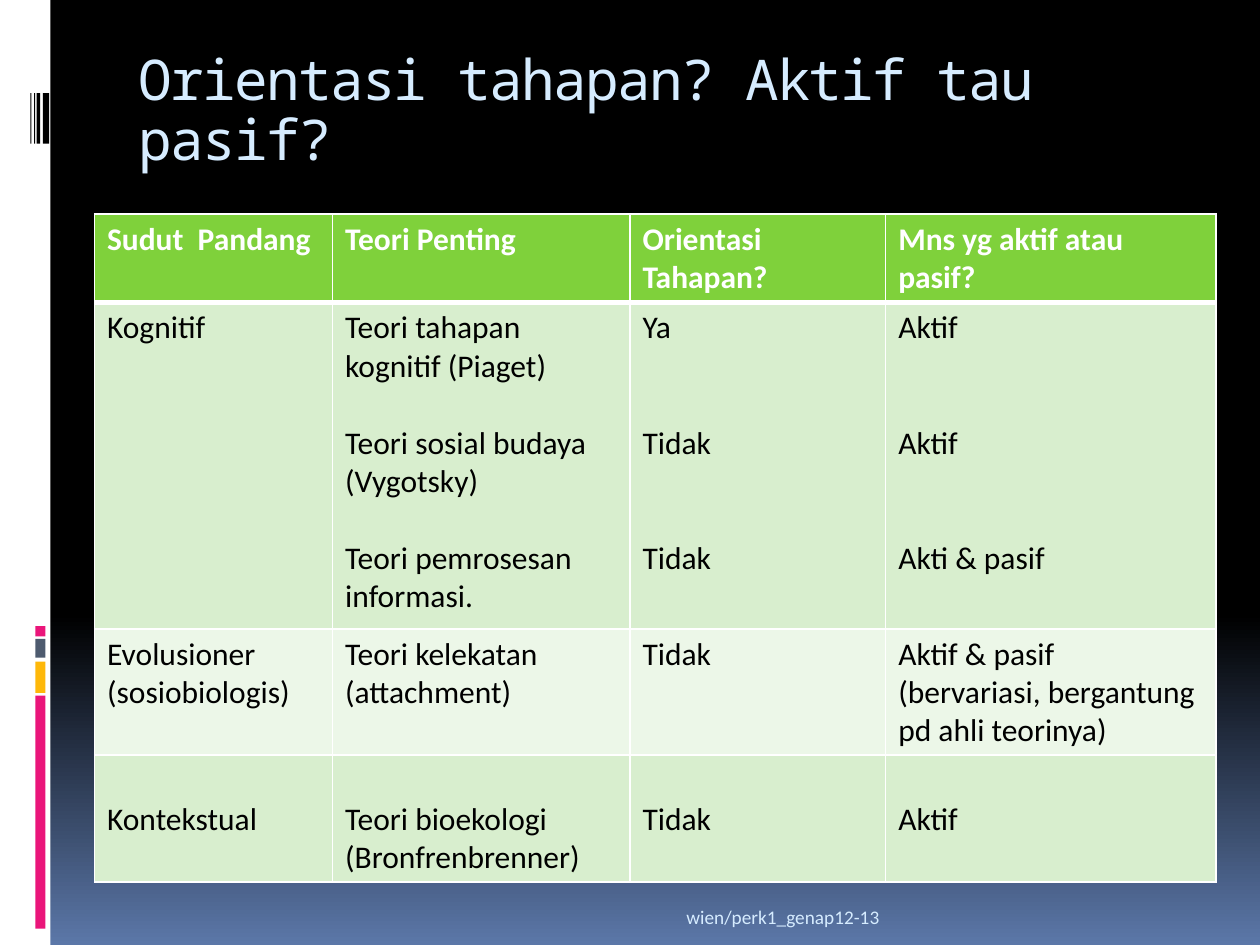
from typing import NamedTuple

from lxml import etree
from pptx import Presentation
from pptx.dml.color import RGBColor
from pptx.enum.shapes import MSO_SHAPE
from pptx.enum.text import MSO_ANCHOR, MSO_AUTO_SIZE, PP_ALIGN
from pptx.oxml import parse_xml
from pptx.oxml.ns import nsdecls, qn
from pptx.util import Inches, Pt

RECTANGLE = MSO_SHAPE.RECTANGLE
TOP, BOTTOM = MSO_ANCHOR.TOP, MSO_ANCHOR.BOTTOM
RIGHT = PP_ALIGN.RIGHT
NO_AUTOFIT = MSO_AUTO_SIZE.NONE

BODY_FONT, TITLE_FONT = "Calibri", "Noto Sans Mono"
WHITE, BLACK, PALE_BLUE = "FFFFFF", "000000", "D6ECFF"
PINK, AMBER, SLATE = "EA157A", "FEB80A", "4E5B6F"
GREEN, BAND, LIGHT_BAND = "7FD13B", "D8EECE", "ECF7E8"
TABLE_LINE = 22  # height of one 18 pt line, in points


class Bar(NamedTuple):
    left: float
    top: float
    width: float
    height: float
    color: str


class TableRow(NamedTuple):
    height: float
    fill: str
    cells: list[list[str]]  # paragraphs of each cell
    gaps: list[int] = [0, 0, 0, 0]  # empty lines between paragraphs, per column
    top_margin: float = 0.05


SIDE_BARS = [
    Bar(0, 0, 0.4, 7.5, WHITE),
    Bar(0.28, 5.52, 0.08, 1.85, PINK),
    Bar(0.28, 5.25, 0.08, 0.25, AMBER),
    Bar(0.28, 5.07, 0.08, 0.15, SLATE),
    Bar(0.28, 4.97, 0.08, 0.08, PINK),
] + [
    Bar(left, 0.74, width, 0.4, BLACK)
    for left, width in [(0.34, 0.05), (0.29, 0.03), (0.27, 0.01), (0.24, 0.01)]
]

COLUMN_WIDTHS = [1.89, 2.36, 2.03, 2.62]
TABLE_ROWS = [
    TableRow(0.68, GREEN, [
        ["Sudut  Pandang"],
        ["Teori Penting"],
        ["Orientasi", "Tahapan?"],
        ["Mns yg aktif atau pasif?"],
    ]),
    TableRow(2.59, BAND, [
        ["Kognitif"],
        ["Teori tahapan kognitif (Piaget)",
         "Teori sosial budaya (Vygotsky)",
         "Teori pemrosesan informasi."],
        ["Ya", "Tidak", "Tidak"],
        ["Aktif", "Aktif", "Akti & pasif"],
    ], gaps=[0, 1, 2, 2]),
    TableRow(0.96, LIGHT_BAND, [
        ["Evolusioner (sosiobiologis)"],
        ["Teori kelekatan (attachment)"],
        ["Tidak"],
        ["Aktif & pasif (bervariasi, bergantung pd ahli teorinya)"],
    ]),
    TableRow(0.96, BAND, [
        ["Kontekstual"],
        ["Teori bioekologi (Bronfrenbrenner)"],
        ["Tidak"],
        ["Aktif"],
    ], top_margin=0.36),
]


def rgb(color: str) -> RGBColor:
    return RGBColor.from_string(color)


def style(paragraph, font_name: str, size: float, color: str, bold: bool = False) -> None:
    font = paragraph.font
    font.name, font.size, font.bold = font_name, Pt(size), bold
    font.color.rgb = rgb(color)


def set_background(slide) -> None:
    fill = slide.background.fill
    fill.gradient()
    fill.gradient_angle = 270
    stops = fill.gradient_stops
    for stop, position, color in zip(stops, (0, 1), (BLACK, "5B77A8")):
        stop.position = position
        stop.color.rgb = rgb(color)
    stop_list = next(slide.background._cSld.iter(qn("a:gsLst")))
    stop_list.insert(1, parse_xml(
        f'<a:gs {nsdecls("a")} pos="65000"><a:srgbClr val="{BLACK}"/></a:gs>'))


def add_bar(slide, bar: Bar) -> None:
    shape = slide.shapes.add_shape(RECTANGLE, *map(Inches, bar[:4]))
    shape.shadow.inherit = False
    shape.fill.solid()
    shape.fill.fore_color.rgb = rgb(bar.color)
    shape.line.fill.background()


def set_title(slide) -> None:
    title = slide.shapes.title
    title.left, title.top, title.width, title.height = map(Inches, (1, 0.36, 8.5, 1))
    frame = title.text_frame
    frame.text = "Orientasi tahapan? Aktif tau pasif?"
    frame.auto_size, frame.vertical_anchor = NO_AUTOFIT, TOP
    paragraph = frame.paragraphs[0]
    paragraph.alignment = PP_ALIGN.LEFT
    paragraph.line_spacing = 0.9
    style(paragraph, TITLE_FONT, 32, PALE_BLUE)
    paragraph.runs[0].font._element.set("spc", "-100")


def add_footer(slide) -> None:
    frame = slide.shapes.add_textbox(*map(Inches, (1, 7.02, 6.08, 0.4))).text_frame
    frame.word_wrap, frame.vertical_anchor = True, BOTTOM
    frame.text = "wien/perk1_genap12-13"
    frame.paragraphs[0].alignment = RIGHT
    style(frame.paragraphs[0], BODY_FONT, 11, PALE_BLUE)


def set_borders(cell, top: float, bottom: float) -> None:
    properties = cell._tc.get_or_add_tcPr()
    widths = {"lnL": 1, "lnR": 1, "lnT": top, "lnB": bottom}
    for index, (side, width) in enumerate(widths.items()):
        line = etree.Element(qn(f"a:{side}"), w=str(Pt(width)))
        fill = etree.SubElement(line, qn("a:solidFill"))
        etree.SubElement(fill, qn("a:srgbClr"), val=WHITE)
        properties.insert(index, line)


def add_theory_table(slide) -> None:
    frame = slide.shapes.add_table(
        len(TABLE_ROWS), len(COLUMN_WIDTHS), Inches(0.75), Inches(1.7),
        Inches(sum(COLUMN_WIDTHS)), Inches(sum(row.height for row in TABLE_ROWS)))
    table = frame.table
    for column, width in zip(table.columns, COLUMN_WIDTHS):
        column.width = Inches(width)
    for index, row in enumerate(TABLE_ROWS):
        is_header = index == 0
        table.rows[index].height = Inches(row.height)
        for column, (lines, gap) in enumerate(zip(row.cells, row.gaps)):
            cell = table.cell(index, column)
            cell.margin_top = Inches(row.top_margin)
            cell.fill.solid()
            cell.fill.fore_color.rgb = rgb(row.fill)
            set_borders(cell, top=3 if index == 1 else 1, bottom=3 if is_header else 1)
            cell.text_frame.text = "\n".join(lines)
            for position, paragraph in enumerate(cell.text_frame.paragraphs):
                style(paragraph, BODY_FONT, 18, WHITE if is_header else BLACK, is_header)
                if position and gap:
                    paragraph.space_before = Pt(gap * TABLE_LINE)


def main() -> None:
    presentation = Presentation()
    presentation.slide_width, presentation.slide_height = Inches(10), Inches(7.5)
    slide = presentation.slides.add_slide(presentation.slide_layouts[5])
    set_background(slide)
    for bar in SIDE_BARS:
        add_bar(slide, bar)
    add_footer(slide)
    add_theory_table(slide)
    set_title(slide)
    presentation.save("out.pptx")


if __name__ == "__main__":
    main()
